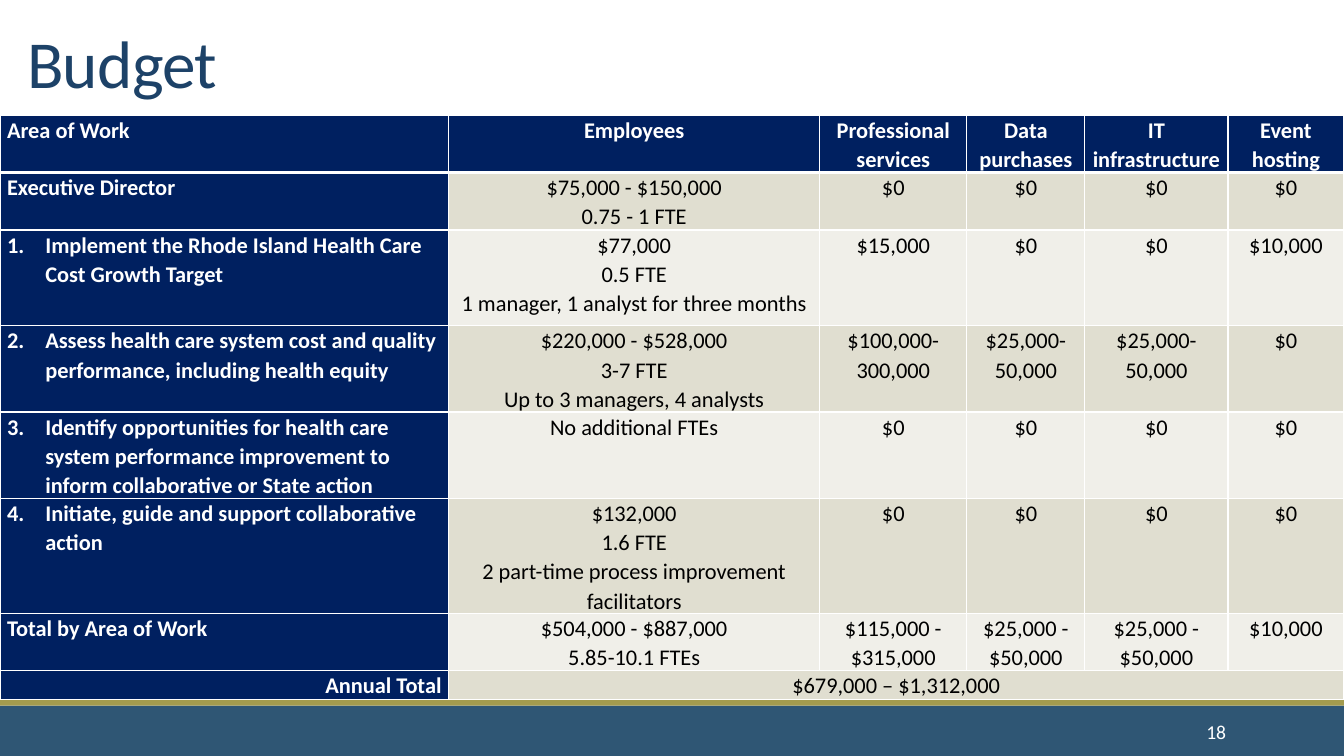
from lxml import etree
from pptx import Presentation
from pptx.dml.color import RGBColor
from pptx.enum.shapes import MSO_CONNECTOR, MSO_SHAPE
from pptx.enum.text import MSO_ANCHOR as ANCHOR, PP_ALIGN as ALIGN
from pptx.oxml.ns import qn
from pptx.util import Inches, Pt

WHITE = RGBColor(0xFF, 0xFF, 0xFF)
BLACK = RGBColor(0, 0, 0)
NAVY = RGBColor(0x00, 0x20, 0x60)
TITLE_BLUE = RGBColor(0x1D, 0x42, 0x68)
FOOTER_BLUE = RGBColor(0x2F, 0x56, 0x74)
GOLD = RGBColor(0xA3, 0x9B, 0x4E)
RULE_BLUE = RGBColor(0x7E, 0xA9, 0xCA)
BANDS = [RGBColor(0xF0, 0xEF, 0xE9), RGBColor(0xE0, 0xDE, 0xD0)]
FONT = "Calibri"

COL_WIDTHS = [4.45, 3.68, 1.46, 1.17, 1.42, 1.15]
ROW_HEIGHTS = [0.47, 0.47, 0.95, 0.71, 0.71, 0.95, 0.47, 0.23]
NUMBERED_ROWS = range(2, 6)
# A line break inside a cell starts a new paragraph
BUDGET = [
    ["Area of Work", "Employees", "Professional services", "Data purchases",
     "IT infrastructure", "Event hosting"],
    ["Executive Director", "$75,000 - $150,000\n0.75 - 1 FTE",
     "$0", "$0", "$0", "$0"],
    ["Implement the Rhode Island Health Care Cost Growth Target",
     "$77,000\n0.5 FTE\n1 manager, 1 analyst for three months",
     "$15,000", "$0", "$0", "$10,000"],
    ["Assess health care system cost and quality performance, including health equity",
     "$220,000 - $528,000\n3-7 FTE\nUp to 3 managers, 4 analysts",
     "$100,000-300,000", "$25,000-50,000", "$25,000-50,000", "$0"],
    ["Identify opportunities for health care system performance improvement "
     "to inform collaborative or State action",
     "No additional FTEs", "$0", "$0", "$0", "$0"],
    ["Initiate, guide and support collaborative action",
     "$132,000\n1.6 FTE\n2 part-time process improvement facilitators",
     "$0", "$0", "$0", "$0"],
    ["Total by Area of Work", "$504,000 - $887,000\n5.85-10.1 FTEs",
     "$115,000 -$315,000", "$25,000 -$50,000", "$25,000 -\n$50,000", "$10,000"],
    ["Annual Total", "$679,000 – $1,312,000"],
]


def add_run(p, text, size, color, bold=False):
    r = p.add_run()
    r.text = text
    r.font.name, r.font.size, r.font.bold = FONT, Pt(size), bold
    r.font.color.rgb = color
    return r


def add_text(s, box, text, size, color, anchor, align=ALIGN.LEFT):
    tf = s.shapes.add_textbox(*map(Inches, box)).text_frame
    tf.word_wrap = True
    tf.vertical_anchor = anchor
    p = tf.paragraphs[0]
    p.alignment = align
    return p, add_run(p, text, size, color)


def add_bar(s, box, color):
    sp = s.shapes.add_shape(MSO_SHAPE.RECTANGLE, *map(Inches, box))
    sp.shadow.inherit = False
    sp.fill.solid()
    sp.fill.fore_color.rgb = color
    sp.line.fill.background()


def add_backdrop(s, left, top, width, height):
    # Footer band with a gold strip above it
    add_bar(s, (left, top + height - 0.5, width, 0.5), FOOTER_BLUE)
    add_bar(s, (left, top + height - 0.57, width, 0.07), GOLD)
    # Thin rule under the title
    y = Inches(top + 1.41)
    rule = s.shapes.add_connector(MSO_CONNECTOR.STRAIGHT, Inches(left + 0.49), y,
                                  Inches(left + width - 0.47), y)
    rule.line.color.rgb = RULE_BLUE
    rule.line.width = Pt(1)
    etree.SubElement(rule._element.spPr, qn("a:effectLst"))


def add_title(s, box):
    p, r = add_text(s, box, "Budget", 48, TITLE_BLUE, ANCHOR.BOTTOM)
    p.line_spacing = 0.85
    r._r.get_or_add_rPr().set("spc", "-50")


def set_borders(cell, bottom):
    tcPr = cell._tc.get_or_add_tcPr()
    for side, width in zip("LRTB", (1, 1, 1, bottom)):
        ln = etree.SubElement(tcPr, qn(f"a:ln{side}"), w=str(Pt(width)))
        fill = etree.SubElement(ln, qn("a:solidFill"))
        etree.SubElement(fill, qn("a:srgbClr"), val=str(WHITE))


def number_paragraph(p, start):
    pPr = p._p.get_or_add_pPr()
    pPr.set("marL", str(Inches(0.38)))
    pPr.set("indent", str(Inches(-0.38)))
    etree.SubElement(pPr, qn("a:buFont"), typeface="+mj-lt")
    etree.SubElement(pPr, qn("a:buAutoNum"), type="arabicPeriod", startAt=str(start))


def fill_cell(cell, text, row, col):
    heading = row == 0 or col == 0
    set_borders(cell, bottom=3 if row == 0 else 1)
    cell.fill.solid()
    cell.fill.fore_color.rgb = NAVY if heading else BANDS[row % 2]
    cell.margin_left = cell.margin_right = Inches(0.07)
    cell.margin_top = cell.margin_bottom = 0
    tf = cell.text_frame
    for i, line in enumerate(text.split("\n")):
        p = tf.add_paragraph() if i else tf.paragraphs[0]
        p.line_spacing = 1.07
        p.alignment = ALIGN.CENTER if col else ALIGN.LEFT
        add_run(p, line, 16, WHITE if heading else BLACK, heading)


def add_budget_table(s, left, top, width, height):
    table = s.shapes.add_table(len(BUDGET), len(COL_WIDTHS),
                               *map(Inches, (left, top, width, height))).table
    for column, w in zip(table.columns, COL_WIDTHS):
        column.width = Inches(w)
    for row, h in zip(table.rows, ROW_HEIGHTS):
        row.height = Inches(h)
    for i, texts in enumerate(BUDGET):
        for j, text in enumerate(texts):
            fill_cell(table.cell(i, j), text, i, j)
    for i in NUMBERED_ROWS:
        number_paragraph(table.cell(i, 0).text_frame.paragraphs[0], i - 1)
    # The annual total spans every amount column
    last = len(BUDGET) - 1
    table.cell(last, 1).merge(table.cell(last, len(COL_WIDTHS) - 1))
    table.cell(last, 0).text_frame.paragraphs[0].alignment = ALIGN.RIGHT


def main():
    prs = Presentation()
    prs.slide_width, prs.slide_height = Inches(13.33), Inches(7.5)
    s = prs.slides.add_slide(prs.slide_layouts[6])
    add_backdrop(s, 0, 0, 13.33, 7.5)
    add_title(s, (0.17, -0.02, 12.37, 1.08))
    add_budget_table(s, 0, 1.14, sum(COL_WIDTHS), sum(ROW_HEIGHTS))
    # Slide number
    add_text(s, (10.83, 7.06, 1.43, 0.4), "18", 14, WHITE, ANCHOR.MIDDLE, ALIGN.RIGHT)
    prs.save("out.pptx")


if __name__ == "__main__":
    main()
